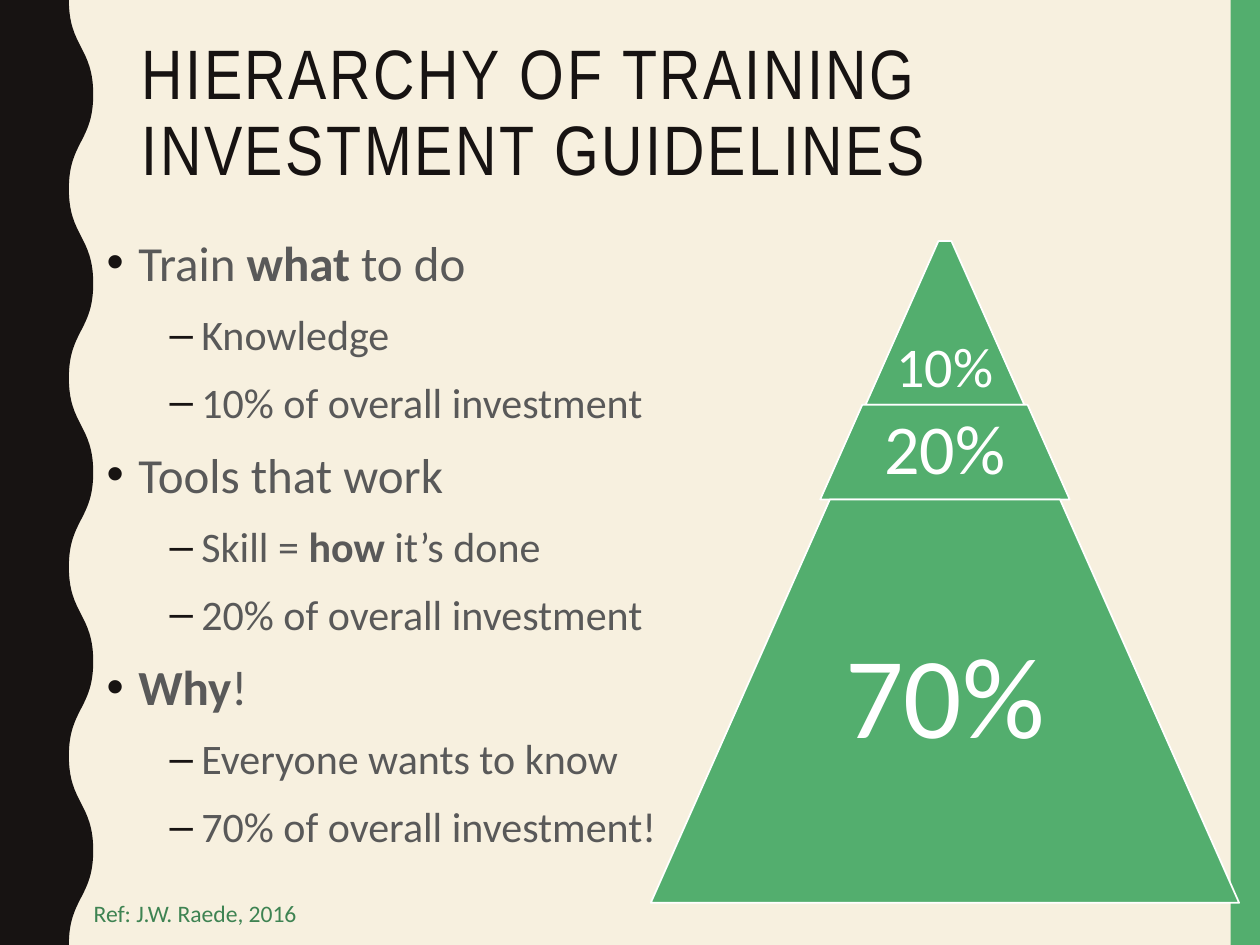
from lxml.etree import SubElement
from pptx import Presentation
from pptx.dml.color import RGBColor
from pptx.enum.shapes import MSO_SHAPE as Preset
from pptx.enum.text import MSO_ANCHOR as Anchor, MSO_AUTO_SIZE as AutoSize, PP_ALIGN as Align
from pptx.oxml.ns import qn
from pptx.util import Cm, Pt

CREAM = RGBColor(0xF7, 0xF0, 0xDF)
GREEN = RGBColor(0x53, 0xAE, 0x6E)
DARK_GREEN = RGBColor(0x3E, 0x83, 0x52)
BLACK = RGBColor(0x17, 0x13, 0x12)
GREY = RGBColor(0x59, 0x59, 0x59)
WHITE = RGBColor(0xFF, 0xFF, 0xFF)

WIDTH, HEIGHT = 25.4, 19.05
WAVE_INNER, WAVE_OUTER, HALF_WAVES = 1.39, 1.88, 10

BULLETS = [
    (0, ["Train ", "*what", " to do"]),
    (1, ["Knowledge"]),
    (1, ["10% of overall investment"]),
    (0, ["Tools that work"]),
    (1, ["Skill = ", "*how", " it’s done"]),
    (1, ["20% of overall investment"]),
    (0, ["*Why", "!"]),
    (1, ["Everyone wants to know"]),
    (1, ["70% of overall investment!"]),
]
LEVELS = [("•", 0.64, 28), ("–", 1.91, 24)]
TIERS = [
    ("10%", 4.86, 3.3, 3.2, 0.459, 32, 0.1, Anchor.BOTTOM),
    ("20%", 8.16, 1.91, 5.03, 0.444, 40, 0.15, Anchor.MIDDLE),
    ("70%", 10.07, 8.13, 11.86, 0.444, 66, 0.23, Anchor.MIDDLE),
]
PYRAMID_CENTRE = 19.05


def add_text(paragraph, text, size, color, font="Calibri", bold=False, spacing=None):
    """Add a formatted run to a paragraph."""
    run = paragraph.add_run()
    run.text = text
    run.font.name, run.font.size, run.font.bold = font, Pt(size), bold
    run.font.color.rgb = color
    if spacing:
        run.font._element.set("spc", str(spacing))


def add_box(slide, left, top, width, height, anchor=Anchor.TOP, margin=None):
    """Add a wrapping text box and return its text frame."""
    frame = slide.shapes.add_textbox(Cm(left), Cm(top), Cm(width), Cm(height)).text_frame
    frame.word_wrap = True
    frame.vertical_anchor = anchor
    if margin is not None:
        frame.margin_left = frame.margin_right = Cm(margin)
        frame.margin_top = frame.margin_bottom = Cm(margin)
    return frame


def paint(shape, color, line=None):
    """Give a shape a flat fill and an optional outline."""
    shape.shadow.inherit = False
    shape.fill.solid()
    shape.fill.fore_color.rgb = color
    if line is None:
        shape.line.fill.background()
    else:
        shape.line.color.rgb = line
        shape.line.width = Pt(1)


def bend(segment, start, end):
    """Turn a straight segment into an S-curve with vertical ends."""
    middle = (start[1] + end[1]) // 2
    segment.clear()
    segment.tag = qn("a:cubicBezTo")
    for x, y in [(start[0], middle), (end[0], middle), end]:
        point = SubElement(segment, qn("a:pt"))
        point.set("x", str(x))
        point.set("y", str(y))


def add_wave(slide):
    """Draw the dark band with a wavy right edge."""
    nodes = [
        (Cm(WAVE_OUTER if index % 2 else WAVE_INNER), Cm(HEIGHT * index / HALF_WAVES))
        for index in range(HALF_WAVES + 1)
    ]
    builder = slide.shapes.build_freeform(*nodes[0])
    builder.add_line_segments([*nodes[1:], (0, Cm(HEIGHT)), (0, 0)], close=True)
    band = builder.convert_to_shape()
    segments = list(band._element.iter(qn("a:lnTo")))
    for segment, start, end in zip(segments, nodes, nodes[1:]):
        bend(segment, start, end)
    paint(band, BLACK)


def add_title(slide, lines):
    """Place and format the title placeholder."""
    title = slide.shapes.title
    title.left, title.top, title.width, title.height = Cm(2.6), Cm(0.42), Cm(21.2), Cm(3.8)
    frame = title.text_frame
    frame.auto_size = AutoSize.NONE
    frame.vertical_anchor = Anchor.MIDDLE
    paragraph = frame.paragraphs[0]
    paragraph.alignment = Align.LEFT
    paragraph.line_spacing = 0.9
    for index, line in enumerate(lines):
        if index:
            paragraph.add_line_break()
        add_text(paragraph, line, 40, BLACK, font="Arial Narrow", spacing=150)


def set_bullet(paragraph, mark, indent):
    """Give a paragraph a hanging bullet."""
    properties = paragraph._p.get_or_add_pPr()
    properties.set("marL", str(Cm(indent)))
    properties.set("indent", str(-Cm(0.64)))
    color = SubElement(properties, qn("a:buClr"))
    SubElement(color, qn("a:srgbClr")).set("val", str(BLACK))
    SubElement(properties, qn("a:buFont")).set("typeface", "Arial")
    SubElement(properties, qn("a:buChar")).set("char", mark)


def add_bullets(slide):
    """Write the two-level list, with starred pieces in bold."""
    frame = add_box(slide, 1.9, 4.44, 21.2, 13.54)
    for index, (level, pieces) in enumerate(BULLETS):
        paragraph = frame.add_paragraph() if index else frame.paragraphs[0]
        mark, indent, size = LEVELS[level]
        paragraph.level = level
        paragraph.line_spacing = 1.1
        paragraph.space_before = Pt(7)
        set_bullet(paragraph, mark, indent)
        for piece in pieces:
            add_text(paragraph, piece.lstrip("*"), size, GREY, bold=piece.startswith("*"))


def add_tier(slide, label, top, height, width, slope, size, margin, anchor):
    """Draw one pyramid tier with its label."""
    left = PYRAMID_CENTRE - width / 2
    tier = slide.shapes.add_shape(Preset.TRAPEZOID, Cm(left), Cm(top), Cm(width), Cm(height))
    tier.adjustments[0] = slope
    paint(tier, GREEN, line=WHITE)
    frame = add_box(slide, left, top, width, height, anchor, margin)
    paragraph = frame.paragraphs[0]
    paragraph.alignment = Align.CENTER
    paragraph.line_spacing = 0.9
    add_text(paragraph, label, size, WHITE)


def main():
    """Build and save the slide."""
    presentation = Presentation()
    presentation.slide_width, presentation.slide_height = Cm(WIDTH), Cm(HEIGHT)
    slide = presentation.slides.add_slide(presentation.slide_layouts[5])
    slide.background.fill.solid()
    slide.background.fill.fore_color.rgb = CREAM
    band = slide.shapes.add_shape(Preset.RECTANGLE, Cm(24.81), 0, Cm(0.59), Cm(HEIGHT))
    paint(band, GREEN)
    add_wave(slide)
    add_title(slide, ["HIERARCHY OF TRAINING ", "INVESTMENT GUIDELINES"])
    add_bullets(slide)
    for tier in TIERS:
        add_tier(slide, *tier)
    reference = add_box(slide, 1.64, 17.99, 5.87, 0.97)
    add_text(reference.paragraphs[0], "Ref: J.W. Raede, 2016", 13.5, DARK_GREEN)
    presentation.save("out.pptx")


if __name__ == "__main__":
    main()
